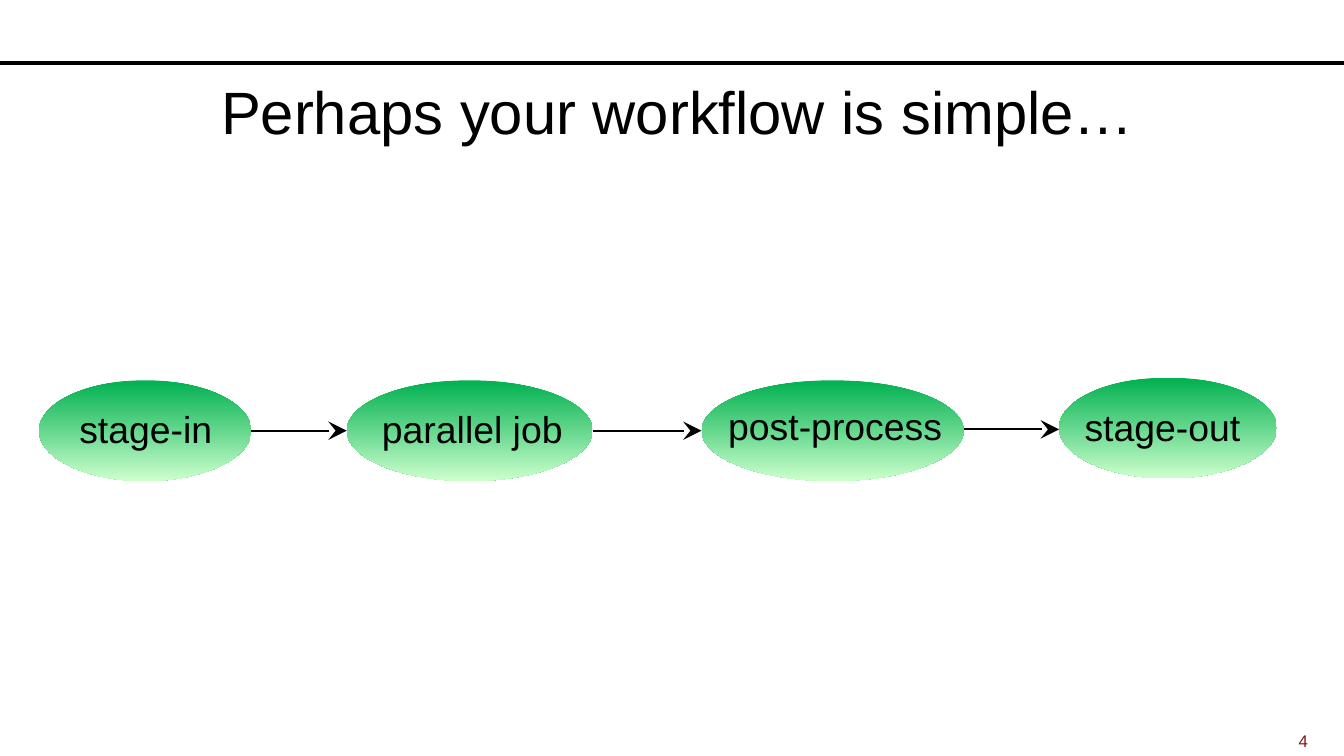
from pptx import Presentation
from pptx.dml.color import RGBColor
from pptx.enum.shapes import MSO_CONNECTOR as Connector, MSO_SHAPE as Shape
from pptx.enum.text import MSO_ANCHOR as Anchor, PP_ALIGN as Align
from pptx.oxml.ns import qn
from pptx.util import Inches, Pt
from lxml.etree import SubElement

COLORS = {"ink": "000000", "page": "82151A", "green": "00B050", "mint": "CCFFCC"}


class WorkflowSlide:
    """Holds the style and the current slide, and draws each kind of element."""

    font = "Arial"

    def __init__(self, slide):
        self.slide = slide

    def color(self, key):
        return RGBColor.from_string(COLORS[key])

    def text(self, words, box, size, color="ink", align=Align.CENTER, anchor=Anchor.TOP):
        frame = self.slide.shapes.add_textbox(*map(Inches, box)).text_frame
        frame.word_wrap = True
        frame.vertical_anchor = anchor
        paragraph = frame.paragraphs[0]
        paragraph.text = words
        paragraph.alignment = align
        paragraph.font.name = self.font
        paragraph.font.size = Pt(size)
        paragraph.font.color.rgb = self.color(color)

    def ellipse(self, box):
        step = self.slide.shapes.add_shape(Shape.OVAL, *map(Inches, box))
        step.shadow.inherit = False
        step.line.fill.background()
        step.fill.gradient()
        step.fill.gradient_angle = 270
        for stop, key in zip(step.fill.gradient_stops, ("green", "mint")):
            stop.color.rgb = self.color(key)

    def line(self, left, right, y, width, arrow=False):
        link = self.slide.shapes.add_connector(
            Connector.STRAIGHT, Inches(left), Inches(y), Inches(right), Inches(y))
        link.line.color.rgb = self.color("ink")
        link.line.width = Pt(width)
        if arrow:
            SubElement(link.line._get_or_add_ln(), qn("a:tailEnd"),
                       type="stealth", w="lg", len="lg")
        SubElement(link._element.spPr, qn("a:effectLst"))


def main():
    deck = Presentation()
    deck.slide_width, deck.slide_height = Inches(10), Inches(10 * 9 / 16)
    workflow = WorkflowSlide(deck.slides.add_slide(deck.slide_layouts[6]))

    workflow.line(0, 10, 0.47, 2)
    workflow.text("Perhaps your workflow is simple…", (0.17, 0.5, 9.75, 0.65), 32,
                  anchor=Anchor.MIDDLE)
    workflow.text("4", (8.75, 5.39, 1.08, 0.19), 9, "page", Align.RIGHT)

    steps = [
        ("stage-in", (0.29, 2.83, 1.58), (0.42, 2.97, 1.33)),
        ("parallel job", (2.58, 2.83, 1.83), (2.68, 2.97, 1.67)),
        ("post-process", (5.22, 2.83, 1.95), (5.3, 2.95, 1.83)),
        ("stage-out", (7.88, 2.81, 1.62), (7.92, 2.96, 1.46)),
    ]
    for label, oval, label_box in steps:
        workflow.ellipse((*oval, 0.75))
        workflow.text(label, (*label_box, 0.44), 20)

    for (_, source, _), (_, target, _) in zip(steps, steps[1:]):
        middle = (source[1] + target[1] + 0.75) / 2
        workflow.line(source[0] + source[2], target[0], middle, 1, arrow=True)

    deck.save("out.pptx")


if __name__ == "__main__":
    main()
